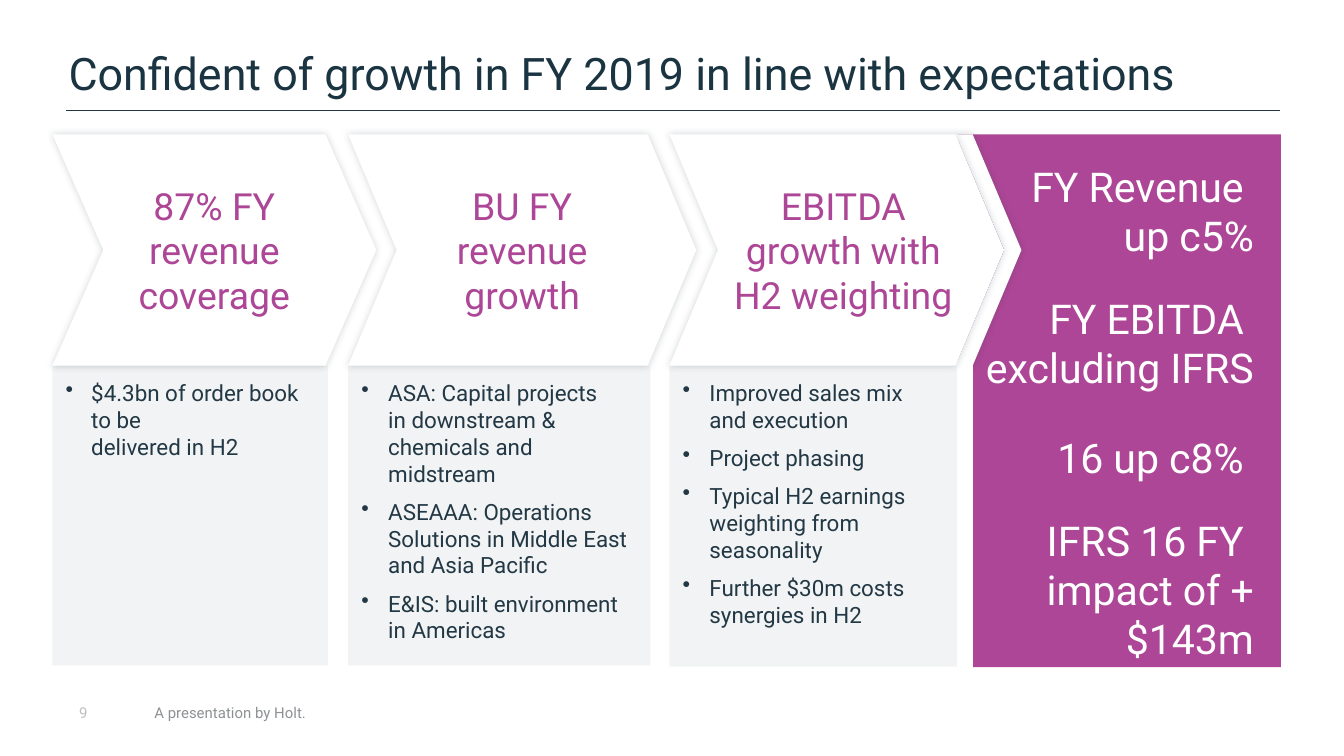
import dataclasses

import lxml.etree
import pptx
import pptx.dml.color
import pptx.enum.shapes
import pptx.enum.text
import pptx.oxml.ns
import pptx.util

Pt = pptx.util.Pt
Align = pptx.enum.text.PP_ALIGN
Anchor = pptx.enum.text.MSO_ANCHOR
Preset = pptx.enum.shapes.MSO_SHAPE


@dataclasses.dataclass(frozen=True)
class Theme:
    font: str = "Roboto"
    white: str = "FFFFFF"
    purple: str = "AD4696"
    ink: str = "233845"
    heading: str = "1A3441"
    panel: str = "F2F3F4"
    footer: str = "8D9194"
    number: str = "BFBFBF"
    title_size: int = 24
    outlook_size: int = 22
    driver_size: int = 20
    detail_size: int = 12
    footer_size: int = 8


def rgb(color):
    return pptx.dml.color.RGBColor.from_string(color)


def child(parent, tag, **attributes):
    return lxml.etree.SubElement(parent, pptx.oxml.ns.qn(tag), attributes)


class SlideBuilder:
    def __init__(self, slide, theme):
        self.slide = slide
        self.theme = theme

    def rule(self, x1, y1, x2, y2):
        rule = self.slide.shapes.add_connector(
            pptx.enum.shapes.MSO_CONNECTOR.STRAIGHT, Pt(x1), Pt(y1), Pt(x2), Pt(y2))
        rule.line.color.rgb = rgb(self.theme.ink)
        rule.line.width = Pt(0.5)
        child(rule._element.spPr, "a:effectLst")

    def block(self, preset, box, color, point=None, shadow=False):
        block = self.slide.shapes.add_shape(preset, *map(Pt, box))
        if point is not None:
            block.adjustments[0] = point
        block.fill.solid()
        block.fill.fore_color.rgb = rgb(color)
        block.line.fill.background()
        block.shadow.inherit = False
        if shadow:
            effects = block._element.spPr.find(pptx.oxml.ns.qn("a:effectLst"))
            outer = child(effects, "a:outerShdw", blurRad=str(Pt(4)), dist="0",
                          dir="0", algn="ctr", rotWithShape="0")
            tint = child(outer, "a:srgbClr", val=self.theme.ink)
            child(tint, "a:alpha", val="20000")
        return block

    def label(self, box, text, size, color, anchor, insets):
        label = self.slide.shapes.add_textbox(*map(Pt, box))
        self.fill_text(label, [text], size, color, anchor, insets)

    def fill_text(self, shape, paragraphs, size, color, anchor, insets,
                  align=Align.LEFT, after=0, hang=0):
        frame = shape.text_frame
        frame.word_wrap = True
        frame.vertical_anchor = anchor
        (frame.margin_left, frame.margin_top,
         frame.margin_right, frame.margin_bottom) = map(Pt, insets)
        for index, text in enumerate(paragraphs):
            paragraph = frame.add_paragraph() if index else frame.paragraphs[0]
            paragraph.alignment = align
            paragraph.space_after = Pt(after)
            if hang:
                properties = paragraph._p.get_or_add_pPr()
                properties.set("marL", str(Pt(hang)))
                properties.set("indent", str(-Pt(hang)))
                child(properties, "a:buChar", char="•")
            for row, line in enumerate(text.split("\n")):
                if row:
                    paragraph.add_line_break()
                run = paragraph.add_run()
                run.text = line
                run.font.name = self.theme.font
                run.font.size = Pt(size)
                run.font.color.rgb = rgb(color)


def main():
    theme = Theme()
    deck = pptx.Presentation()
    deck.slide_width, deck.slide_height = Pt(720), Pt(405)
    builder = SlideBuilder(deck.slides.add_slide(deck.slide_layouts[6]), theme)

    builder.rule(35.5, 59.3, 685.5, 59.3)
    builder.label((36.7, 17.3, 646.6, 36), "Confident of growth in FY 2019 in line with expectations",
                  theme.title_size, theme.heading, Anchor.BOTTOM, (0, 0, 0, 0))

    top, driver_height = 72, 123.9
    outlook = builder.block(Preset.CHEVRON, (513.4, top, 172.8, 285.4), theme.purple, 0)
    builder.fill_text(outlook,
                      ["FY Revenue \nup c5%",
                       "FY EBITDA \nexcluding IFRS \n16 up c8% ",
                       "IFRS 16 FY \nimpact of +$143m"],
                      theme.outlook_size, theme.white, Anchor.TOP, (14.4, 14.4, 14.4, 0),
                      Align.RIGHT, after=18)
    builder.block(Preset.CHEVRON, (511.9, top, 35.3, driver_height), theme.white, 0.74, shadow=True)
    builder.block(Preset.RECTANGLE, (512.6, 195.1, 8.6, 164.2), theme.white)

    columns = [
        (28.1, 147.6, 160.6, 173.5, 0.22, 7.2, 16, 13.7, "87% FY revenue coverage",
         ["$4.3bn of order book to be \ndelivered in H2"]),
        (186.5, 162, 160.6, 186.5, 0.21, 7.2, 6, 14.4, "BU FY\nrevenue growth",
         ["ASA: Capital projects \nin downstream & chemicals and midstream",
          "ASEAAA: Operations Solutions in Middle East and Asia Pacific",
          "E&IS: built environment in Americas"]),
        (358.6, 154.1, 161.3, 179.3, 0.21, 0, 6, 14.4, "EBITDA growth with H2 weighting",
         ["Improved sales mix \nand execution",
          "Project phasing",
          "Typical H2 earnings weighting from seasonality",
          "Further $30m costs synergies in H2"]),
    ]
    for left, width, height, driver_width, point, right_inset, after, hang, driver, details in columns:
        panel = builder.block(Preset.RECTANGLE, (left, top + driver_height, width, height), theme.panel)
        builder.fill_text(panel, details, theme.detail_size, theme.ink, Anchor.TOP,
                          (7.2, 7.2, 7.2, 3.6), after=after, hang=hang)
        arrow = builder.block(Preset.CHEVRON, (left, top, driver_width, driver_height),
                              theme.white, point, shadow=True)
        builder.fill_text(arrow, [driver], theme.driver_size, theme.purple, Anchor.MIDDLE,
                          (7.2, 7.2, right_inset, 7.2), Align.CENTER, after=16)

    for left, width, text, color in ((35.3, 40.3, "9", theme.number),
                                     (75.6, 105.8, "A presentation by Holt.", theme.footer)):
        builder.label((left, 374.4, width, 15.1), text, theme.footer_size, color,
                      Anchor.MIDDLE, (7.2, 3.6, 7.2, 3.6))

    deck.save("out.pptx")


if __name__ == "__main__":
    main()
